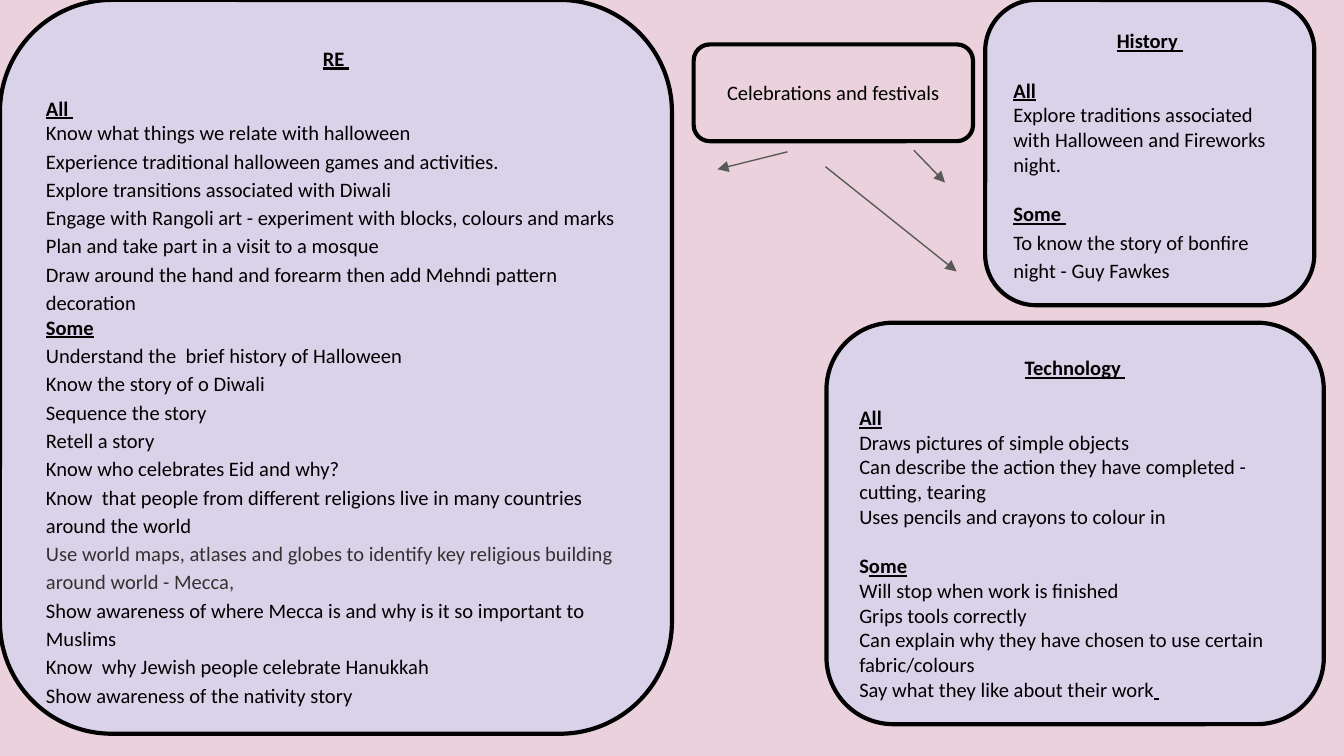
from lxml import etree
from pptx import Presentation
from pptx.dml.color import RGBColor
from pptx.enum.shapes import MSO_CONNECTOR, MSO_SHAPE
from pptx.enum.text import MSO_ANCHOR, PP_ALIGN
from pptx.oxml.ns import qn
from pptx.util import Cm, Pt

ROUND = MSO_SHAPE.ROUNDED_RECTANGLE
LINE = MSO_CONNECTOR.STRAIGHT
TOP, MIDDLE = MSO_ANCHOR.TOP, MSO_ANCHOR.MIDDLE
LEFT, CENTER = PP_ALIGN.LEFT, PP_ALIGN.CENTER

COLORS = {
    "pink": "EAD1DC",
    "lilac": "D9D2E9",
    "black": "000000",
    "dark": "333333",
    "gray": "595959",
}


class Board:
    """Style and current slide of the topic board."""

    font = "Calibri"
    size = Pt(11)
    gap = Pt(13.4)
    loose = 1.15
    inset = Cm(0.25)

    def __init__(self, slide):
        self.slide = slide
        fill = slide.background.fill
        fill.solid()
        fill.fore_color.rgb = self.color("pink")

    def color(self, name):
        return RGBColor.from_string(COLORS[name])

    def box(self, place, fill, anchor=TOP):
        shape = self.slide.shapes.add_shape(ROUND, *map(Cm, place))
        shape.shadow.inherit = False
        shape.fill.solid()
        shape.fill.fore_color.rgb = self.color(fill)
        shape.line.color.rgb = self.color("black")
        shape.line.width = Pt(2.25)
        frame = shape.text_frame
        frame.word_wrap = True
        frame.vertical_anchor = anchor
        frame.margin_left = frame.margin_right = self.inset
        frame.margin_top = frame.margin_bottom = self.inset
        return frame

    def style(self, run, strong=False, under=False, color="black"):
        font = run.font
        font.name, font.size = self.font, self.size
        font.bold, font.underline = strong, under
        font.color.rgb = self.color(color)

    def title(self, frame, text, strong=True):
        frame.text = text
        para = frame.paragraphs[0]
        para.alignment = CENTER
        self.style(para.runs[0], strong, strong)

    def label(self, frame, text, gap=True, plain=""):
        para = frame.add_paragraph()
        para.text = plain + text if not plain else plain
        para.alignment = LEFT
        if gap:
            para.space_before = self.gap
        self.style(para.runs[0], True, not plain)
        if plain:
            self.tail(para, text)

    def tail(self, para, text):
        run = para.add_run()
        run.text = text
        self.style(run, True, True)

    def lines(self, frame, texts, space=1.0, color="black"):
        for text in texts:
            para = frame.add_paragraph()
            para.text = text
            para.alignment = LEFT
            para.line_spacing = space
            self.style(para.runs[0], color=color)
        return para

    def arrow(self, *ends):
        line = self.slide.shapes.add_connector(LINE, *map(Cm, ends))
        line.line.color.rgb = self.color("gray")
        line.line.width = Pt(0.75)
        etree.SubElement(line.line._get_or_add_ln(), qn("a:tailEnd"), type="triangle")
        etree.SubElement(line._element.spPr, qn("a:effectLst"))


def main():
    deck = Presentation()
    deck.slide_width, deck.slide_height = Cm(25.4), Cm(14.29)
    board = Board(deck.slides.add_slide(deck.slide_layouts[6]))

    topic = board.box((13.11, 0.84, 5.28, 1.83), "pink", MIDDLE)
    board.title(topic, "Celebrations and festivals", strong=False)

    tech = board.box((15.62, 6.1, 9.4, 7.59), "lilac")
    board.title(tech, "Technology ")
    board.label(tech, "All")
    board.lines(tech, [
        "Draws pictures of simple objects",
        "Can describe the action they have completed - cutting, tearing",
        "Uses pencils and crayons to colour in",
    ])
    board.label(tech, "ome", plain="S")
    last = board.lines(tech, [
        "Will stop when work is finished",
        "Grips tools correctly",
        "Can explain why they have chosen to use certain fabric/colours",
        "Say what they like about their work",
    ])
    board.tail(last, " ")

    faith = board.box((0, 0, 12.7, 13.87), "lilac")
    board.title(faith, "RE ")
    board.label(faith, "All ")
    board.lines(faith, ["Know what things we relate with halloween"])
    board.lines(faith, [
        "Experience traditional halloween games and activities.",
        "Explore transitions associated with Diwali",
        "Engage with Rangoli art - experiment with blocks, colours and marks",
        "Plan and take part in a visit to a mosque",
        "Draw around the hand and forearm then add Mehndi pattern decoration",
    ], board.loose)
    board.label(faith, "Some", gap=False)
    board.lines(faith, [
        "Understand the  brief history of Halloween",
        "Know the story of o Diwali",
        "Sequence the story",
        "Retell a story",
        "Know who celebrates Eid and why?",
        "Know  that people from different religions live in many countries around the world",
    ], board.loose)
    board.lines(faith, [
        "Use world maps, atlases and globes to identify key religious building around world - Mecca,",
    ], board.loose, "dark")
    board.lines(faith, [
        "Show awareness of where Mecca is and why is it so important to Muslims",
        "Know  why Jewish people celebrate Hanukkah",
        "Show awareness of the nativity story",
    ], board.loose)

    past = board.box((18.62, 0, 6.22, 5.77), "lilac")
    board.title(past, "History ")
    board.label(past, "All")
    board.lines(past, ["Explore traditions associated with Halloween and Fireworks night."])
    board.label(past, "Some ")
    board.lines(past, ["To know the story of bonfire night - Guy Fawkes"], board.loose)

    board.arrow(14.88, 2.87, 13.56, 3.2)
    board.arrow(15.6, 3.15, 18.08, 5.13)
    board.arrow(17.27, 2.84, 17.86, 3.45)

    deck.save("out.pptx")


if __name__ == "__main__":
    main()
